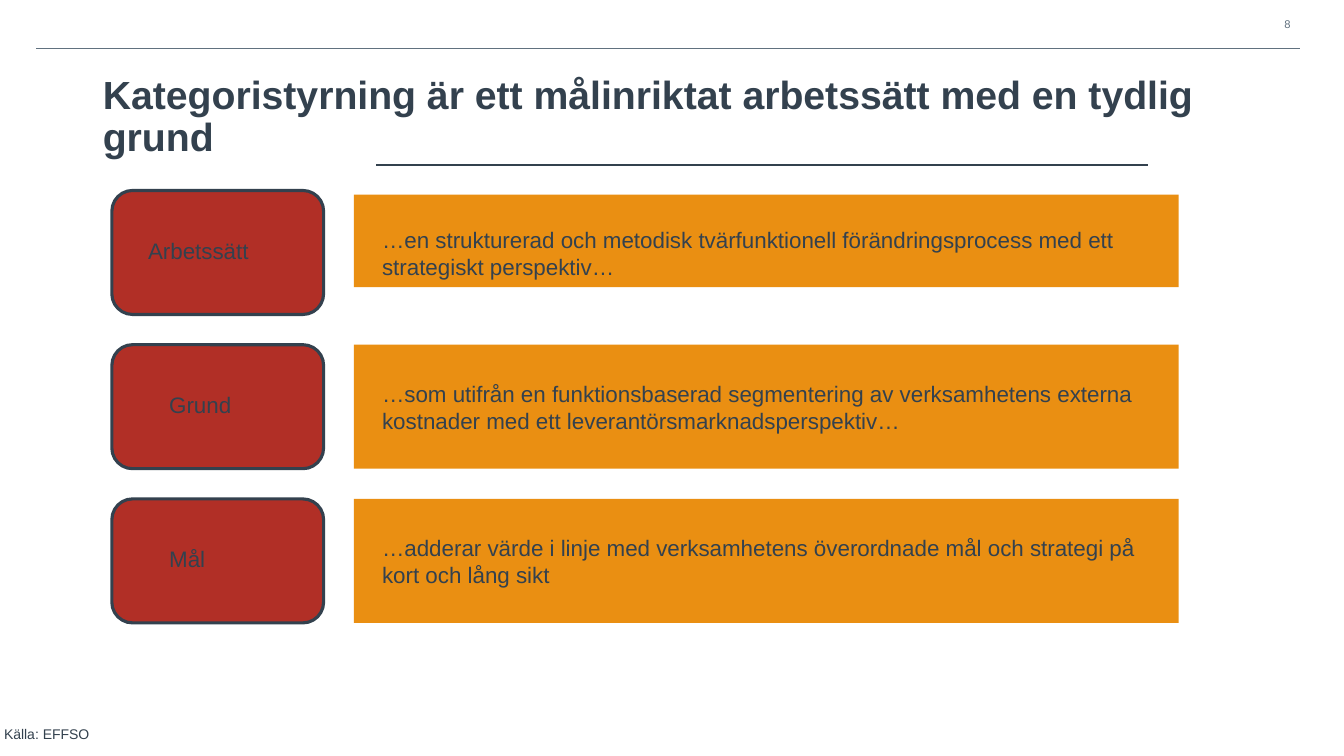
from dataclasses import dataclass

from pptx import Presentation
from pptx.dml.color import RGBColor
from pptx.enum.shapes import MSO_CONNECTOR, MSO_SHAPE
from pptx.enum.text import MSO_ANCHOR, MSO_AUTO_SIZE, PP_ALIGN
from pptx.oxml.ns import qn
from pptx.shapes.autoshape import Shape
from pptx.slide import Slide
from pptx.util import Inches, Pt
from lxml.etree import SubElement


@dataclass(frozen=True)
class Theme:
    font: str = "Arial"
    ink: str = "33414E"
    gray: str = "61717F"
    red: str = "B12F26"
    gold: str = "EA8F12"
    title: int = 28
    body: int = 16
    source: int = 10
    number: int = 8


@dataclass(frozen=True)
class Box:
    left: float
    top: float
    width: float
    height: float

    def place(self) -> tuple[int, ...]:
        return tuple(Inches(n) for n in (self.left, self.top, self.width, self.height))


@dataclass(frozen=True)
class Row:
    label: str
    text: str
    left: float = 1.58
    width: float = 1.17
    drop: float = 0
    tall: float = 1.23


THEME = Theme()
TOP, PITCH = 1.89, 1.53
ROWS = [
    Row("Arbetssätt", "…en strukturerad och metodisk tvärfunktionell förändringsprocess "
        "med ett strategiskt perspektiv…", left=1.37, width=1.6, drop=0.04, tall=0.92),
    Row("Grund", "…som utifrån en funktionsbaserad segmentering av verksamhetens "
        "externa kostnader med ett leverantörsmarknadsperspektiv…"),
    Row("Mål", "…adderar värde i linje med verksamhetens överordnade mål och "
        "strategi på kort och lång sikt"),
]


def color(code: str) -> RGBColor:
    return RGBColor.from_string(code)


def write(shape: Shape, text: str, size: int, tint: str = THEME.ink,
          pad: tuple[float, ...] = (0.1, 0.05, 0.1, 0.05), bold: bool = False,
          align: PP_ALIGN = PP_ALIGN.LEFT, anchor: MSO_ANCHOR = MSO_ANCHOR.TOP) -> None:
    """Fill a shape with one styled paragraph; pad is left, top, right, bottom."""
    frame = shape.text_frame
    frame.text = text
    frame.word_wrap = True
    frame.auto_size = MSO_AUTO_SIZE.NONE
    frame.vertical_anchor = anchor
    frame.margin_left, frame.margin_top, frame.margin_right, frame.margin_bottom = map(Inches, pad)
    par = frame.paragraphs[0]
    par.alignment = align
    font = par.font
    font.name, font.size, font.bold = THEME.font, Pt(size), bold
    font.color.rgb = color(tint)


def add_text(slide: Slide, box: Box, text: str, size: int, **style) -> None:
    write(slide.shapes.add_textbox(*box.place()), text, size, **style)


def add_block(slide: Slide, kind: MSO_SHAPE, box: Box, fill: str, edge: float = 0) -> None:
    block = slide.shapes.add_shape(kind, *box.place())
    block.shadow.inherit = False
    block.fill.solid()
    block.fill.fore_color.rgb = color(fill)
    if edge:
        block.line.color.rgb = color(THEME.ink)
        block.line.width = Pt(edge)
    else:
        block.line.fill.background()


def add_rule(slide: Slide, left: float, right: float, top: float, tint: str, width: float) -> None:
    rule = slide.shapes.add_connector(
        MSO_CONNECTOR.STRAIGHT, Inches(left), Inches(top), Inches(right), Inches(top))
    rule.line.color.rgb = color(tint)
    rule.line.width = Pt(width)
    SubElement(rule._element.spPr, qn("a:effectLst"))


def add_row(slide: Slide, row: Row, top: float) -> None:
    add_block(slide, MSO_SHAPE.ROUNDED_RECTANGLE, Box(1.11, top, 2.1, 1.23), THEME.red, 2.25)
    add_block(slide, MSO_SHAPE.RECTANGLE, Box(3.51, top + row.drop, 8.18, row.tall), THEME.gold)
    add_text(slide, Box(row.left, top + 0.41, row.width, 0.37), row.label, THEME.body)
    add_text(slide, Box(3.73, top + 0.31, 7.67, 0.62), row.text, THEME.body,
             pad=(0.06, 0.04, 0.06, 0.04))


def main() -> None:
    deck = Presentation()
    deck.slide_width, deck.slide_height = Inches(13.33), Inches(7.5)
    slide = deck.slides.add_slide(deck.slide_layouts[5])

    title = slide.shapes.title
    title.left, title.top, title.width, title.height = Box(0.92, 0.71, 11.5, 0.92).place()
    write(title, "Kategoristyrning är ett målinriktat arbetssätt med en tydlig grund",
          THEME.title, bold=True, anchor=MSO_ANCHOR.MIDDLE)
    title.text_frame.paragraphs[0].line_spacing = 0.9

    add_rule(slide, 0.36, 12.89, 0.48, THEME.gray, 0.75)
    add_rule(slide, 3.73, 11.39, 1.64, THEME.ink, 1.5)
    add_text(slide, Box(12.53, 0.14, 0.37, 0.2), "8", THEME.number, tint=THEME.gray,
             align=PP_ALIGN.RIGHT, anchor=MSO_ANCHOR.MIDDLE)
    for i, row in enumerate(ROWS):
        add_row(slide, row, TOP + i * PITCH)
    add_text(slide, Box(0, 7.2, 9.54, 0.21), "Källa: EFFSO", THEME.source, pad=(0.04, 0, 0, 0.04))

    deck.save("out.pptx")


if __name__ == "__main__":
    main()
